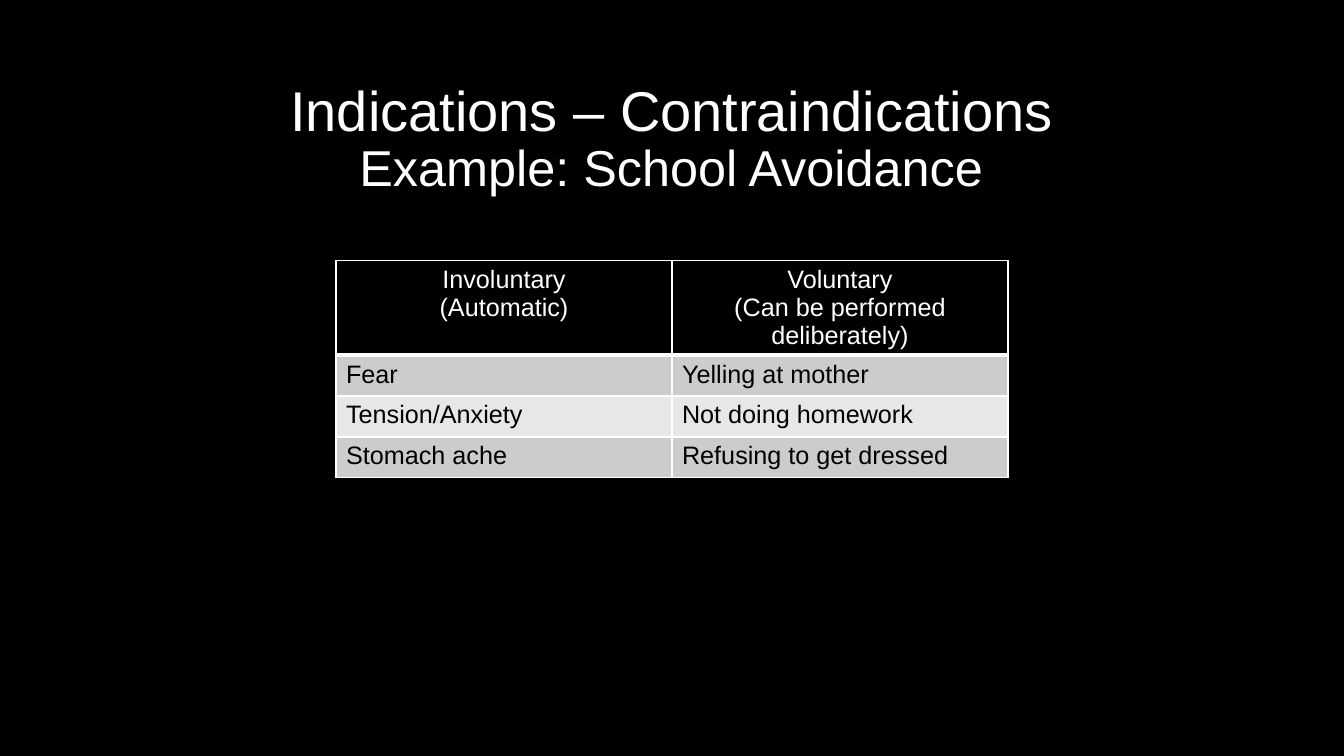
from lxml.etree import SubElement
from pptx import Presentation
from pptx.dml.color import RGBColor
from pptx.enum.text import MSO_ANCHOR, MSO_AUTO_SIZE, PP_ALIGN
from pptx.oxml import parse_xml
from pptx.oxml.ns import nsdecls, qn
from pptx.util import Pt

COLORS = {"black": "000000", "white": "FFFFFF", "dark": "CCCCCC", "light": "E7E7E7"}


def write(par, text, size=18, color="white", align=PP_ALIGN.LEFT):
    par.alignment = align
    run = par.add_run()
    run.text = text
    run.font.name = "Arial"
    run.font.size = Pt(size)
    run.font.bold = False
    run.font.color.rgb = RGBColor.from_string(COLORS[color])


def border(cell, side, width):
    cell._tc.get_or_add_tcPr().append(parse_xml(
        f'<a:{side} {nsdecls("a")} w="{Pt(width)}"><a:solidFill>'
        f'<a:srgbClr val="{COLORS["white"]}"/></a:solidFill></a:{side}>'))


deck = Presentation()
deck.slide_width, deck.slide_height = Pt(960), Pt(540)
slide = deck.slides.add_slide(deck.slide_layouts[5])
back = slide.background.fill
back.solid()
back.fore_color.rgb = RGBColor.from_string(COLORS["black"])

title = slide.shapes.title
title.left, title.top, title.width, title.height = Pt(72), Pt(48), Pt(815), Pt(104.4)
frame = title.text_frame
frame.auto_size = MSO_AUTO_SIZE.NONE
frame.word_wrap = True
frame.vertical_anchor = MSO_ANCHOR.MIDDLE
head = frame.paragraphs[0]
head.line_spacing = 0.9
write(head, "Indications – Contraindications", size=40, align=PP_ALIGN.CENTER)
head.add_line_break()
SubElement(head._p.find(qn("a:br")), qn("a:rPr"), sz="4000")
write(head, "Example: School Avoidance", size=36, align=PP_ALIGN.CENTER)

ROWS = [
    ("Involuntary\n(Automatic)", "Voluntary\n(Can be performed deliberately)"),
    ("Fear", "Yelling at mother"),
    ("Tension/Anxiety", "Not doing homework"),
    ("Stomach ache", "Refusing to get dressed"),
]
FILLS = ["black", "dark", "light", "dark"]

table = slide.shapes.add_table(4, 2, Pt(240), Pt(186), Pt(480), Pt(155)).table
for col in table.columns:
    col.width = Pt(240)
for i, (texts, fill) in enumerate(zip(ROWS, FILLS)):
    table.rows[i].height = Pt(29.2 if i else 67.4)
    for j, text in enumerate(texts):
        cell = table.cell(i, j)
        for side in ("lnL", "lnR", "lnT", "lnB"):
            border(cell, side, 3 if i == 0 and side == "lnB" else 1)
        cell.fill.solid()
        cell.fill.fore_color.rgb = RGBColor.from_string(COLORS[fill])
        for k, line in enumerate(text.split("\n")):
            par = cell.text_frame.add_paragraph() if k else cell.text_frame.paragraphs[0]
            write(par, line, color="black" if i else "white",
                  align=PP_ALIGN.LEFT if i else PP_ALIGN.CENTER)

deck.save("out.pptx")
